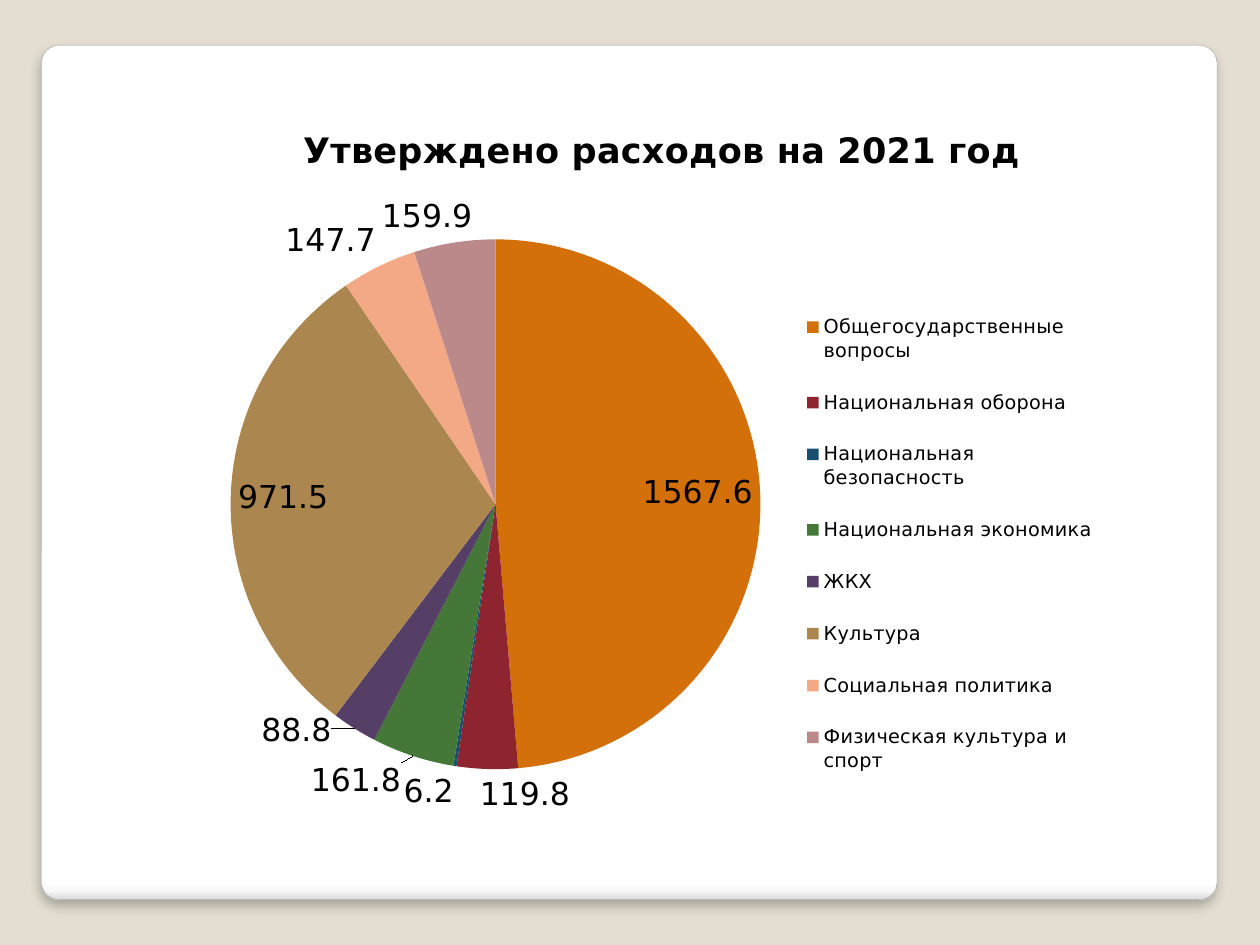
from lxml.etree import SubElement
from pptx import Presentation
from pptx.chart.data import CategoryChartData
from pptx.dml.color import RGBColor
from pptx.enum.chart import XL_CHART_TYPE, XL_LABEL_POSITION as Position, XL_LEGEND_POSITION
from pptx.enum.shapes import MSO_SHAPE
from pptx.oxml import parse_xml
from pptx.oxml.ns import nsdecls, qn
from pptx.util import Inches, Pt

COLORS = {"background": "E3DED1", "outline": "A4A4A4", "text": "000000"}
PANEL_STOPS = [(0, "FFFFFF"), (98, "FFFFFF"), (99, "F7F7F7"), (100, "DADADA")]
FONT = "DejaVu Sans"
EXPENSES = [
    ("Общегосударственные вопросы", 1567.6, "D4700A"),
    ("Национальная оборона", 119.8, "8E2430"),
    ("Национальная безопасность", 6.2, "184E6E"),
    ("Национальная экономика", 161.8, "447738"),
    ("ЖКХ", 88.8, "553F66"),
    ("Культура", 971.5, "AB864F"),
    ("Социальная политика", 147.7, "F3A886"),
    ("Физическая культура и спорт", 159.9, "BB898A"),
]
LABEL_SHIFTS = {
    "Национальная оборона": (0.04, 0),
    "Национальная экономика": (-0.01, 0),
    "ЖКХ": (-0.02, -0.03),
    "Физическая культура и спорт": (0.02, 0),
}
INSIDE_MINIMUM = 900


def style_font(font, size, bold=False):
    """Apply the slide's typeface and text colour."""
    font.name = FONT
    font.size = Pt(size)
    font.bold = bold
    font.color.rgb = RGBColor.from_string(COLORS["text"])


def make_layout(**values):
    """Return a manual chart layout element."""
    layout = parse_xml(f"<c:layout {nsdecls('c')}><c:manualLayout/></c:layout>")
    for name, value in values.items():
        SubElement(layout[0], qn(f"c:{name}")).set("val", str(value))
    return layout


def place_after(parent, name, layout):
    """Put a layout after the named child, replacing any present layout."""
    for present in parent.findall(qn("c:layout")):
        parent.remove(present)
    parent.find(qn(f"c:{name}")).addnext(layout)


def add_panel(slide, left, top, width, height):
    """Add the rounded white panel with its soft shadow."""
    panel = slide.shapes.add_shape(MSO_SHAPE.ROUNDED_RECTANGLE, left, top, width, height)
    panel.adjustments[0] = 0.021
    panel.line.color.rgb = RGBColor.from_string(COLORS["outline"])
    panel.line.width = Pt(0.16)
    panel.fill.gradient()
    stops = "".join(
        f'<a:gs pos="{position * 1000}"><a:srgbClr val="{color}"/></a:gs>'
        for position, color in PANEL_STOPS
    )
    properties = panel._element.spPr
    gradient = properties.find(qn("a:gradFill"))
    properties.replace(gradient, parse_xml(
        f'<a:gradFill {nsdecls("a")}><a:gsLst>{stops}</a:gsLst>'
        '<a:lin ang="5400000" scaled="0"/></a:gradFill>'
    ))
    properties.append(parse_xml(
        f'<a:effectLst {nsdecls("a")}><a:outerShdw blurRad="{Pt(6)}" dist="{Pt(4)}" '
        'dir="5400000" rotWithShape="0"><a:srgbClr val="000000">'
        '<a:alpha val="25000"/></a:srgbClr></a:outerShdw></a:effectLst>'
    ))


def format_slices(plot):
    """Colour the slices and position their value labels."""
    plot.vary_by_categories = True
    series = plot.series[0]
    labels = series.data_labels
    labels.show_value = True
    labels.position = Position.OUTSIDE_END
    style_font(labels.font, 18)
    leader = labels._element.find(qn("c:showLeaderLines"))
    if leader is None:
        leader = SubElement(labels._element, qn("c:showLeaderLines"))
    leader.set("val", "1")
    for index, (name, value, color) in enumerate(EXPENSES):
        point = series.points[index]
        point.format.fill.solid()
        point.format.fill.fore_color.rgb = RGBColor.from_string(color)
        label = point.data_label
        style_font(label.font, 18)
        label.position = Position.INSIDE_END if value > INSIDE_MINIMUM else Position.OUTSIDE_END
        if name in LABEL_SHIFTS:
            x, y = LABEL_SHIFTS[name]
            place_after(labels._element.findall(qn("c:dLbl"))[index], "idx", make_layout(x=x, y=y))


def add_expense_chart(slide, left, top, width, height):
    """Add the pie chart of approved expenses with title and legend."""
    data = CategoryChartData()
    data.categories = [name for name, _, _ in EXPENSES]
    data.add_series("Расходы", [value for _, value, _ in EXPENSES])
    chart = slide.shapes.add_chart(XL_CHART_TYPE.PIE, left, top, width, height, data).chart
    style_font(chart.font, 18)

    chart.has_title = True
    title_frame = chart.chart_title.text_frame
    title_frame.text = "Утверждено расходов на 2021 год"
    style_font(title_frame.paragraphs[0].runs[0].font, 20, bold=True)
    edges = {"xMode": "edge", "yMode": "edge"}
    place_after(chart.chart_title._element, "tx", make_layout(**edges, x=0.13, y=0.02))

    chart.has_legend = True
    chart.legend.position = XL_LEGEND_POSITION.RIGHT
    chart.legend.include_in_layout = False
    style_font(chart.legend.font, 11)
    place_after(chart.legend._element, "legendPos",
                make_layout(**edges, x=0.66, y=0.25, w=0.32, h=0.71))

    format_slices(chart.plots[0])
    plot_area = chart._chartSpace.chart.plotArea
    for present in plot_area.findall(qn("c:layout")):
        plot_area.remove(present)
    plot_area.insert(0, make_layout(layoutTarget="inner", **edges, x=0.06, y=0.18, w=0.56, h=0.74))


def main():
    """Build and save the presentation."""
    presentation = Presentation()
    presentation.slide_width = Inches(10)
    presentation.slide_height = Inches(7.5)
    slide = presentation.slides.add_slide(presentation.slide_layouts[6])
    slide.background.fill.solid()
    slide.background.fill.fore_color.rgb = RGBColor.from_string(COLORS["background"])
    add_panel(slide, Inches(0.33), Inches(0.36), Inches(9.33), Inches(6.78))
    add_expense_chart(slide, Inches(1.38), Inches(0.84), Inches(7.51), Inches(5.75))
    presentation.save("out.pptx")


if __name__ == "__main__":
    main()
